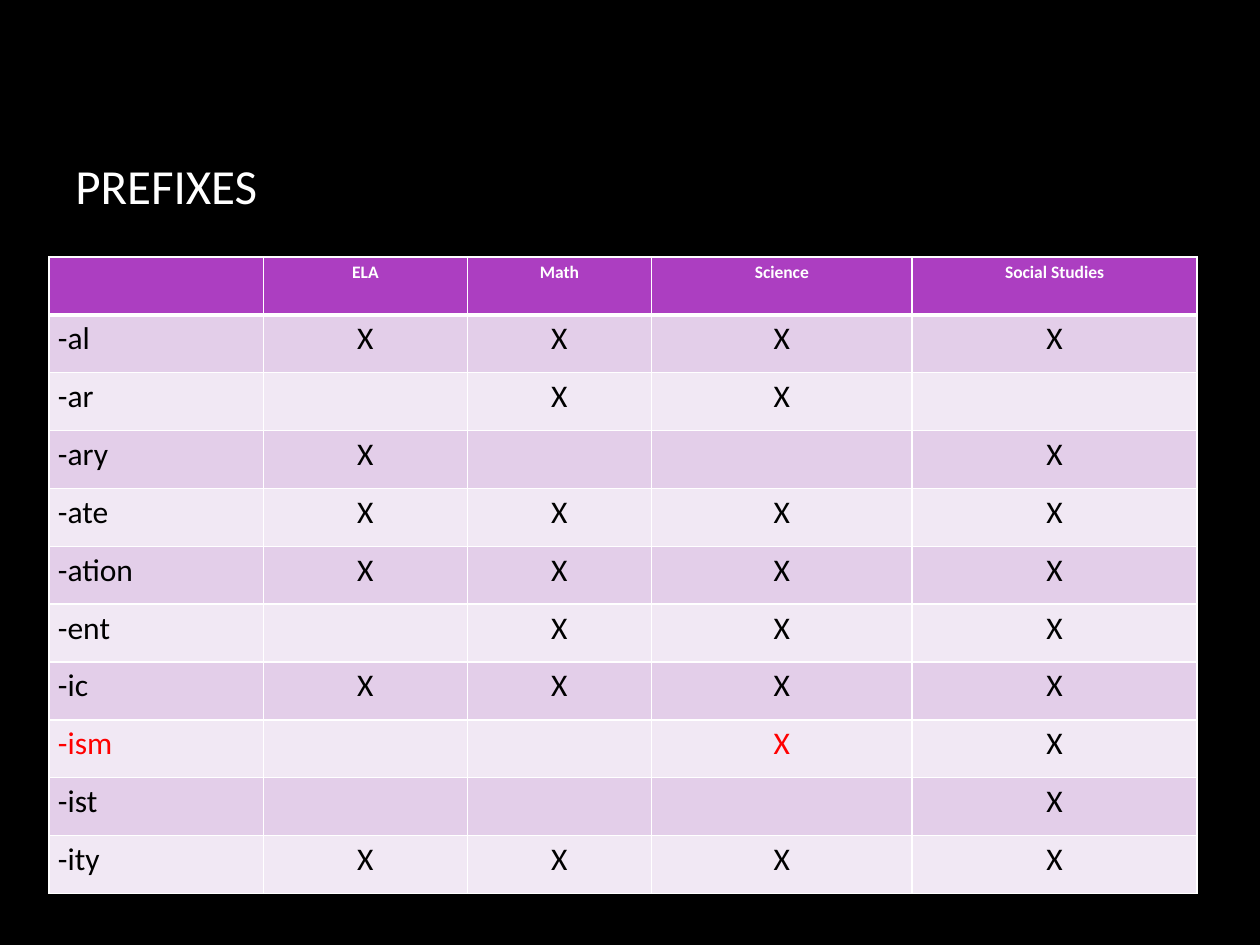
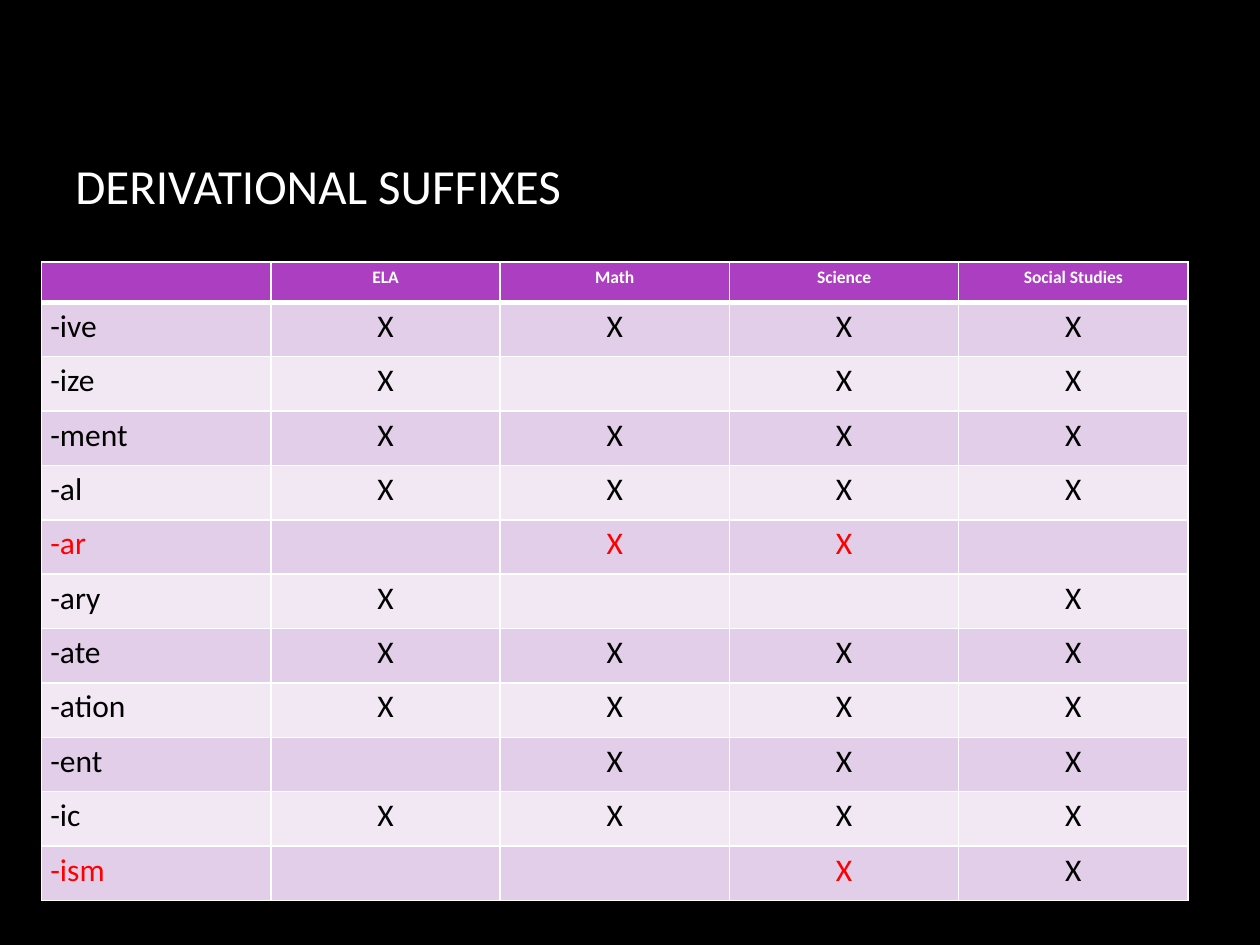
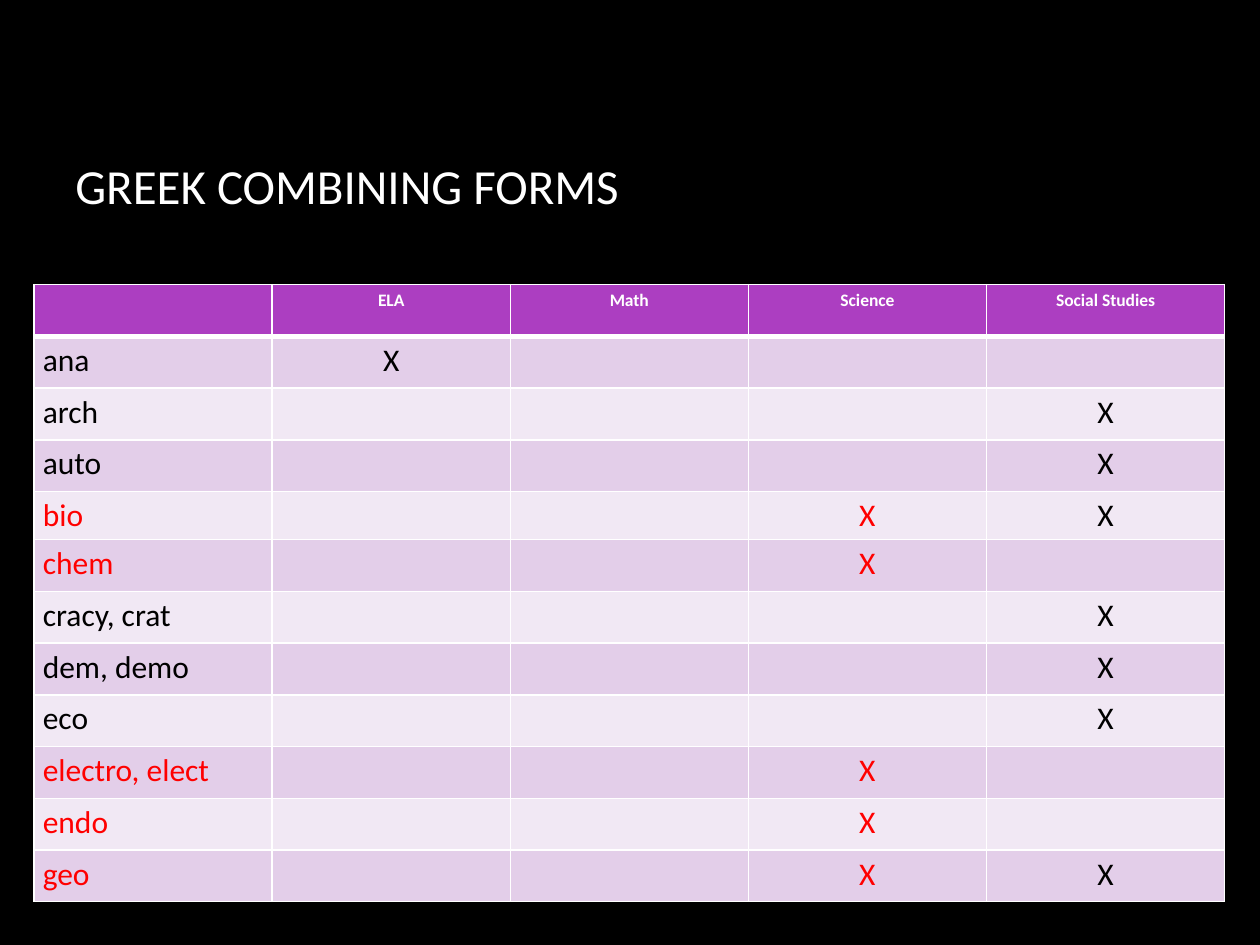
"""Build three slides of word-part tables by school subject."""
from dataclasses import dataclass

from lxml import etree
from pptx import Presentation, util as u
from pptx.dml.color import RGBColor
from pptx.enum import text
from pptx.oxml import ns


@dataclass(frozen=True)
class Theme:
    font: str = "Calibri"
    background: str = "000000"
    title: str = "FFFFFF"
    header: str = "AC3EC1"
    bands: tuple = ("E3CEE9", "F1E8F4")
    border: str = "FFFFFF"
    ink: str = "000000"
    accent: str = "FF0000"
    title_size: int = 28
    header_size: int = 10
    body_size: int = 18


def set_text(tf, words, size, color, bold=False, align=text.PP_ALIGN.LEFT):
    p = tf.paragraphs[0]
    p.text = words
    p.alignment = align
    for r in p.runs:
        r.font.name = theme.font
        r.font.size = u.Pt(size)
        r.font.bold = bold
        r.font.color.rgb = RGBColor.from_string(color)
    if not words:
        etree.SubElement(p._p, ns.qn("a:endParaRPr"), sz=str(size * 100))


def style_cell(cell, fill, top, bottom):
    cell.margin_left = cell.margin_right = u.Inches(0.07)
    cell.margin_top = cell.margin_bottom = u.Inches(0.04)
    tc_pr = cell._tc.get_or_add_tcPr()
    for side, width in (("L", 1), ("R", 1), ("T", top), ("B", bottom)):
        ln = etree.SubElement(tc_pr, ns.qn(f"a:ln{side}"), w=str(u.Pt(width)))
        line_fill = etree.SubElement(ln, ns.qn("a:solidFill"))
        etree.SubElement(line_fill, ns.qn("a:srgbClr"), val=theme.border)
    cell.fill.solid()
    cell.fill.fore_color.rgb = RGBColor.from_string(fill)


theme = Theme()
subjects = ["", "ELA", "Math", "Science", "Social Studies"]
charts = [
    dict(
        title="PREFIXES", left=0.39, top=2.04, height=5.05,
        widths=[1.7, 1.62, 1.46, 2.07, 2.26], fixed_rows={}, red={"-ism"},
        marks={
            "-al": "XXXX", "-ar": " XX ", "-ary": "X  X", "-ate": "XXXX",
            "-ation": "XXXX", "-ent": " XXX", "-ic": "XXXX", "-ism": "  XX",
            "-ist": "   X", "-ity": "XXXX",
        },
    ),
    dict(
        title="DERIVATIONAL SUFFIXES", left=0.33, top=2.08, height=5.07,
        widths=[1.82] * 5, fixed_rows={0: 0.32}, red={"-ar", "-ism"},
        marks={
            "-ive": "XXXX", "-ize": "X XX", "-ment": "XXXX", "-al": "XXXX",
            "-ar": " XX ", "-ary": "X  X", "-ate": "XXXX", "-ation": "XXXX",
            "-ent": " XXX", "-ic": "XXXX", "-ism": "  XX",
        },
    ),
    dict(
        title="GREEK COMBINING FORMS", left=0.27, top=2.26, height=4.89,
        widths=[1.89] * 5, fixed_rows={4: 0.37},
        red={"bio", "chem", "electro, elect", "endo", "geo"},
        marks={
            "ana": "X   ", "arch": "   X", "auto": "   X", "bio": "  XX",
            "chem": "  X ", "cracy, crat": "   X", "dem, demo": "   X",
            "eco": "   X", "electro, elect": "  X ", "endo": "  X ",
            "geo": "  XX",
        },
    ),
]

prs = Presentation()
prs.slide_width, prs.slide_height = u.Inches(10), u.Inches(7.5)

for chart in charts:
    s = prs.slides.add_slide(prs.slide_layouts[6])
    s.background.fill.solid()
    s.background.fill.fore_color.rgb = RGBColor.from_string(theme.background)

    sp = s.shapes.add_textbox(u.Inches(0.5), u.Inches(0.67), u.Inches(8.5), u.Inches(1.59))
    tf = sp.text_frame
    tf.word_wrap = True
    tf.vertical_anchor = text.MSO_ANCHOR.MIDDLE
    set_text(tf, chart["title"], theme.title_size, theme.title)

    rows = [subjects] + [[part, *marks] for part, marks in chart["marks"].items()]
    fixed = chart["fixed_rows"]
    row_height = (chart["height"] - sum(fixed.values())) / (len(rows) - len(fixed))
    table = s.shapes.add_table(
        len(rows), len(subjects), u.Inches(chart["left"]), u.Inches(chart["top"]),
        u.Inches(sum(chart["widths"])), u.Inches(chart["height"]),
    ).table
    for column, width in zip(table.columns, chart["widths"]):
        column.width = u.Inches(width)

    for i, row in enumerate(rows):
        table.rows[i].height = u.Inches(fixed.get(i, row_height))
        is_header = i == 0
        fill = theme.header if is_header else theme.bands[(i - 1) % 2]
        size = theme.header_size if is_header else theme.body_size
        for j, words in enumerate(row):
            cell = table.cell(i, j)
            style_cell(cell, fill, 3 if i == 1 else 1, 3 if is_header else 1)
            is_red = row[0] in chart["red"] and subjects[j] != "Social Studies"
            color = theme.title if is_header else theme.accent if is_red else theme.ink
            align = text.PP_ALIGN.CENTER if j else text.PP_ALIGN.LEFT
            set_text(cell.text_frame, words.strip(), size, color, is_header, align)

prs.save("out.pptx")
